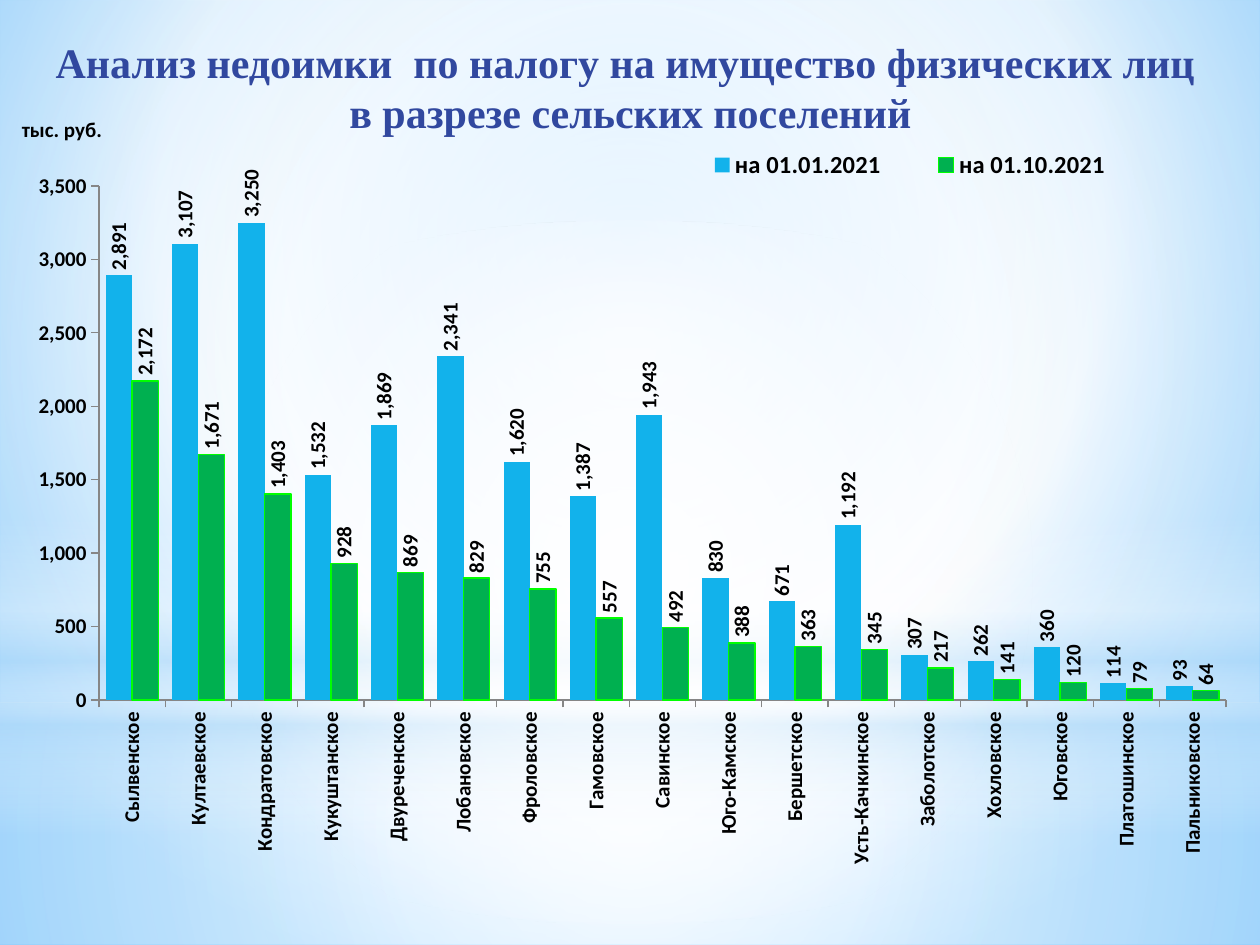
from lxml.etree import SubElement
from pptx import Presentation
from pptx.chart.data import CategoryChartData
from pptx.dml.color import RGBColor
from pptx.enum.chart import XL_CHART_TYPE as ChartType, XL_LABEL_POSITION as LabelPos
from pptx.enum.chart import XL_LEGEND_POSITION as LegendPos, XL_TICK_MARK as Tick
from pptx.enum.shapes import MSO_SHAPE as Preset
from pptx.enum.text import MSO_ANCHOR as Anchor, PP_ALIGN as Align
from pptx.oxml import parse_xml
from pptx.oxml.ns import nsdecls, qn
from pptx.util import Emu, Pt

PX = 914400 / 126
COLORS = {"title": "31489F", "text": "000000", "axis": "868686", "january": "12B2EB",
          "october": "00B050", "october_edge": "00FF00", "white": "FFFFFF",
          "haze": "B4DCFA", "sky": "9ED5FF", "deep_sky": "5BB9FF"}
CENTER = (50, 50, 50, 50)
SKY_STOPS = [(0, "sky", 100), (60, "white", 100), (100, "deep_sky", 100)]
GLOWS = [
    (Preset.RECTANGLE, (0, 703, 1260, 242), CENTER,
     [(0, "white", 91), (37, "white", 76), (100, "haze", 79)]),
    (Preset.RECTANGLE, (0, 0, 1260, 703), CENTER,
     [(0, "white", 89), (48, "white", 62), (100, "haze", 79)]),
    (Preset.RECTANGLE, (0, 519, 1260, 315), None,
     [(0, "white", 0), (29, "white", 30), (45, "haze", 40),
      (55, "white", 26), (65, "haze", 60), (100, "white", 0)]),
    (Preset.OVAL, (0, 221, 1260, 703), CENTER, [(0, "white", 100), (56, "white", 0)]),
]
SETTLEMENTS = [
    ("Сылвенское", 2891, 2172), ("Култаевское", 3107, 1671), ("Кондратовское", 3250, 1403),
    ("Кукуштанское", 1532, 928), ("Двуреченское", 1869, 869), ("Лобановское", 2341, 829),
    ("Фроловское", 1620, 755), ("Гамовское", 1387, 557), ("Савинское", 1943, 492),
    ("Юго-Камское", 830, 388), ("Бершетское", 671, 363), ("Усть-Качкинское", 1192, 345),
    ("Заболотское", 307, 217), ("Хохловское", 262, 141), ("Юговское", 360, 120),
    ("Платошинское", 114, 79), ("Пальниковское", 93, 64),
]


def px(length):
    """Turn px into EMU."""
    return Emu(round(length * PX))


def rgb(name):
    """Look up a colour."""
    return RGBColor.from_string(COLORS[name])


def apply(target, **values):
    """Set attributes from format values."""
    for key, value in values.items():
        setattr(target, key, value)


def style_font(font, size, color="text", face="Calibri"):
    """Give a font its size, colour and face."""
    apply(font, size=Pt(size), bold=True, name=face)
    font.color.rgb = rgb(color)


def set_gradient(parent, stops, focus):
    """Replace the solid fill of a parent element with a gradient."""
    gradient = parse_xml(f'<a:gradFill {nsdecls("a")} rotWithShape="1"><a:gsLst/></a:gradFill>')
    for position, color, opacity in stops:
        stop = SubElement(gradient[0], qn("a:gs"), pos=str(position * 1000))
        tone = SubElement(stop, qn("a:srgbClr"), val=COLORS[color])
        if opacity < 100:
            SubElement(tone, qn("a:alpha"), val=str(opacity * 1000))
    if focus:
        circle = SubElement(gradient, qn("a:path"), {"path": "circle"})
        sides = {side: str(share * 1000) for side, share in zip("ltrb", focus)}
        SubElement(circle, qn("a:fillToRect"), sides)
    else:
        SubElement(gradient, qn("a:lin"), ang="5400000", scaled="0")
    parent.replace(parent.find(qn("a:solidFill")), gradient)


def add_backdrop(slide):
    """Fill the background and lay the soft glows over it."""
    slide.background.fill.solid()
    set_gradient(next(slide.element.iter(qn("p:bgPr"))), SKY_STOPS, (20, 10, 20, 60))
    for preset, box, focus, stops in GLOWS:
        glow = slide.shapes.add_shape(preset, *map(px, box))
        glow.shadow.inherit = False
        glow.line.fill.background()
        glow.fill.solid()
        set_gradient(glow.element.spPr, stops, focus)


def add_title(slide, box):
    """Place the two-line heading."""
    frame = slide.shapes.add_textbox(*map(px, box)).text_frame
    apply(frame, word_wrap=True, vertical_anchor=Anchor.TOP, margin_top=px(10))
    heading = frame.paragraphs[0]
    heading.text = ("Анализ недоимки  по налогу на имущество физических лиц \v"
                    "в разрезе сельских поселений")
    heading.alignment = Align.CENTER
    style_font(heading.font, 24, "title", "Times New Roman")
    for run in heading.runs:
        style_font(run.font, 24, "title", "Times New Roman")


def set_layout(element, box, area, after=None):
    """Fix a chart part at a px area inside the chart box."""
    parts = "" if after else '<c:layoutTarget val="inner"/>'
    parts += '<c:xMode val="edge"/><c:yMode val="edge"/>'
    for key, value, whole in zip("xywh", area, box[2:] * 2):
        parts += f'<c:{key} val="{value / whole:.4f}"/>'
    layout = parse_xml(f'<c:layout {nsdecls("c")}><c:manualLayout>{parts}'
                       '</c:manualLayout></c:layout>')
    for old in element.findall(qn("c:layout")):
        element.remove(old)
    place = element.index(element.find(qn(after))) + 1 if after else 0
    element.insert(place, layout)


def rotate_text(part, degrees):
    """Turn the text of a chart part by some degrees."""
    body = next(part.iter(qn("a:bodyPr")))
    body.set("rot", str(degrees * 60000))
    body.set("vert", "horz")


def style_axes(chart, box):
    """Format both axes and the unit caption."""
    for axis in (chart.category_axis, chart.value_axis):
        apply(axis, has_major_gridlines=False, major_tick_mark=Tick.OUTSIDE,
              minor_tick_mark=Tick.NONE)
        axis.format.line.color.rgb = rgb("axis")
        style_font(axis.tick_labels.font, 12)
    rotate_text(chart.category_axis._element, -90)
    values = chart.value_axis
    apply(values, minimum_scale=0, maximum_scale=3500, major_unit=500)
    apply(values.tick_labels, number_format="#,##0", number_format_is_linked=False)
    caption = values.axis_title
    caption.text_frame.text = "тыс. руб."
    style_font(caption.text_frame.paragraphs[0].runs[0].font, 12)
    rotate_text(caption._element, 0)
    set_layout(caption._element, box, (3, 35), "c:tx")


def style_series(plot):
    """Colour the bars and label them upright."""
    apply(plot, gap_width=52, overlap=0, vary_by_categories=False)
    for bars, color in zip(plot.series, ("january", "october")):
        bars.format.fill.solid()
        bars.format.fill.fore_color.rgb = rgb(color)
        bars.invert_if_negative = False
        labels = bars.data_labels
        apply(labels, show_value=True, number_format="#,##0", number_format_is_linked=False,
              position=LabelPos.OUTSIDE_END)
        style_font(labels.font, 12)
        rotate_text(labels._element, -90)
    edge = plot.series[1].format.line
    edge.color.rgb = rgb("october_edge")
    edge.width = Pt(0.75)


def add_arrears_chart(slide, box):
    """Place the column chart of arrears by settlement."""
    names, january, october = zip(*SETTLEMENTS)
    arrears = CategoryChartData()
    arrears.categories = names
    arrears.add_series("на 01.01.2021", january)
    arrears.add_series("на 01.10.2021", october)
    chart = slide.shapes.add_chart(ChartType.COLUMN_CLUSTERED, *map(px, box), arrears).chart
    apply(chart, has_title=False, has_legend=True)
    style_font(chart.font, 12)
    style_axes(chart, box)
    style_series(chart.plots[0])
    apply(chart.legend, position=LegendPos.BOTTOM, include_in_layout=False)
    style_font(chart.legend.font, 14)
    set_layout(chart.legend._element, box, (650, 66, 490, 46), "c:legendPos")
    plot_area = next(chart._chartSpace.iter(qn("c:plotArea")))
    set_layout(plot_area, box, (84, 110, 1127, 514))


def main():
    """Build the slide and save it."""
    deck = Presentation()
    apply(deck, slide_width=px(1260), slide_height=px(945))
    slide = deck.slides.add_slide(deck.slide_layouts[6])
    add_backdrop(slide)
    add_title(slide, (25, 26, 1211, 79))
    add_arrears_chart(slide, (15, 76, 1230, 853))
    deck.save("out.pptx")


if __name__ == "__main__":
    main()
